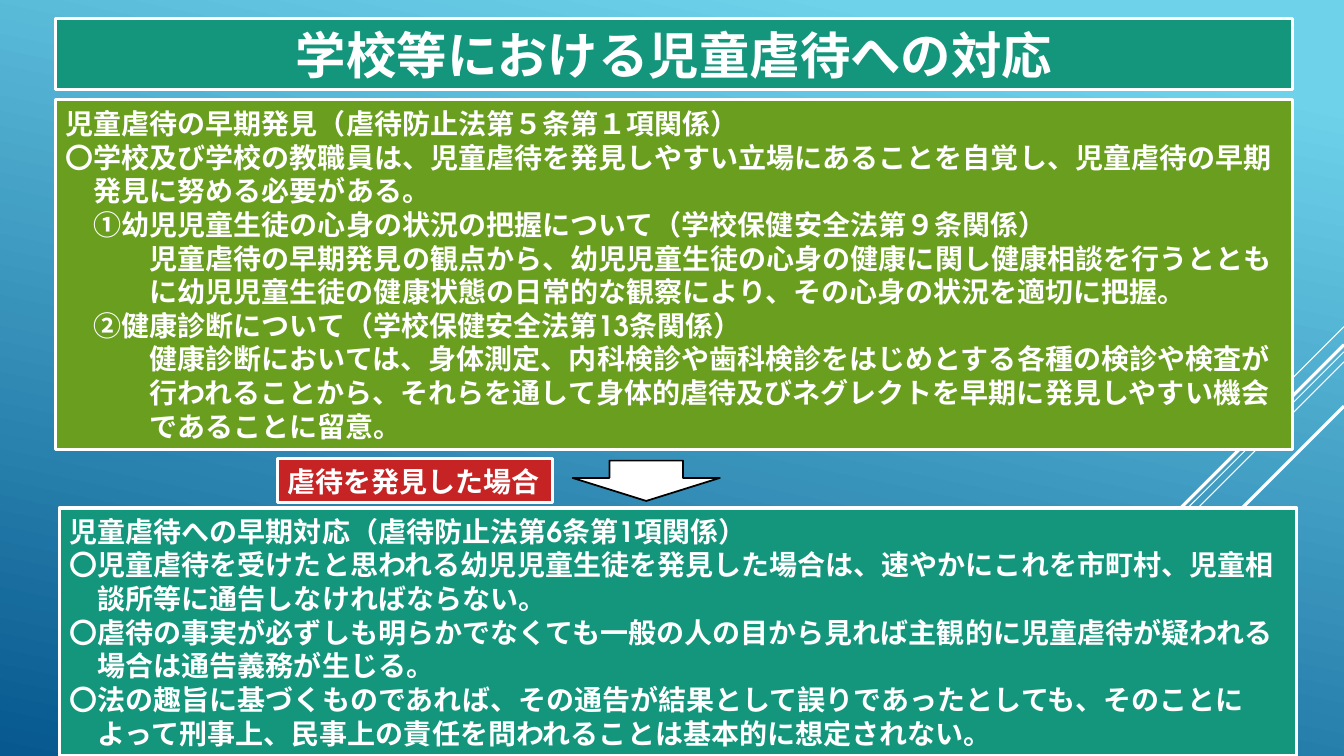
import pptx
import pptx.dml.color
import pptx.enum.dml
import pptx.enum.shapes
import pptx.enum.text
import pptx.oxml
import pptx.util
from lxml import etree

Inches = pptx.util.Inches
Pt = pptx.util.Pt
Shape = pptx.enum.shapes.MSO_SHAPE
Align = pptx.enum.text.PP_ALIGN
Anchor = pptx.enum.text.MSO_ANCHOR

HUES = {
    "sky": "6ED2EB",
    "deep": "06588E",
    "teal": "14967C",
    "green": "6A9E1F",
    "red": "C62324",
    "white": "FFFFFF",
    "black": "000000",
}

FIND = [
    (0, "児童虐待の早期発見（虐待防止法第５条第１項関係）"),
    (0, "〇学校及び学校の教職員は、児童虐待を発見しやすい立場にあることを自覚し、児童虐待の早期"),
    (1, "発見に努める必要がある。"),
    (1, "①幼児児童生徒の心身の状況の把握について（学校保健安全法第９条関係）"),
    (3, "児童虐待の早期発見の観点から、幼児児童生徒の心身の健康に関し健康相談を行うととも"),
    (3, "に幼児児童生徒の健康状態の日常的な観察により、その心身の状況を適切に把握。"),
    (1, "②健康診断について（学校保健安全法第13条関係）"),
    (3, "健康診断においては、身体測定、内科検診や歯科検診をはじめとする各種の検診や検査が"),
    (3, "行われることから、それらを通して身体的虐待及びネグレクトを早期に発見しやすい機会"),
    (3, "であることに留意。"),
]

REPLY = [
    (0, "児童虐待への早期対応（虐待防止法第6条第1項関係）"),
    (0, "〇児童虐待を受けたと思われる幼児児童生徒を発見した場合は、速やかにこれを市町村、児童相"),
    (1, "談所等に通告しなければならない。"),
    (0, "〇虐待の事実が必ずしも明らかでなくても一般の人の目から見れば主観的に児童虐待が疑われる"),
    (1, "場合は通告義務が生じる。"),
    (0, "〇法の趣旨に基づくものであれば、その通告が結果として誤りであったとしても、そのことに"),
    (1, "よって刑事上、民事上の責任を問われることは基本的に想定されない。"),
]

RAYS = [
    (3.24, 1.0, 0.75),
    (3.49, 3.26, 0.75),
    (3.59, 2.07, 0.75),
    (3.42, 1.91, 2.25),
    (4.03, 1.39, 2.25),
]


class Page:
    font = "TeX Gyre Adventor"
    size = 20
    edge = 2.25

    def __init__(self, deck):
        self.slide = deck.slides.add_slide(deck.slide_layouts[3])
        self.shapes = self.slide.shapes

    def hue(self, name):
        return pptx.dml.color.RGBColor.from_string(HUES[name])

    def back(self, top, low, angle):
        fill = self.slide.background.fill
        fill.gradient()
        fill.gradient_angle = 360 - angle
        for stop, name, spot in zip(fill.gradient_stops, (top, low), (0.1, 1)):
            stop.color.rgb = self.hue(name)
            stop.position = spot

    def ray(self, top, run, width):
        line = self.shapes.add_connector(
            pptx.enum.shapes.MSO_CONNECTOR.STRAIGHT,
            Inches(13.33), Inches(top), Inches(13.33 - run), Inches(top + run))
        line.line.color.rgb = self.hue("white")
        line.line.width = Pt(width)
        etree.SubElement(line._element.spPr, pptx.oxml.ns.qn("a:effectLst"))
        tree = line._element.getparent()
        tree.insert(2, line._element)

    def paint(self, shape, fill, line="white", width=edge):
        shape.fill.solid()
        shape.fill.fore_color.rgb = self.hue(fill)
        shape.line.color.rgb = self.hue(line)
        shape.line.width = Pt(width)

    def put(self, shape, rows, size=size, align=Align.LEFT, wrap=True):
        frame = shape.text_frame
        frame.auto_size = pptx.enum.text.MSO_AUTO_SIZE.NONE
        frame.word_wrap = wrap
        frame.vertical_anchor = Anchor.MIDDLE
        for num, (step, text) in enumerate(rows):
            para = frame.add_paragraph() if num else frame.paragraphs[0]
            para.alignment = align
            para.space_before = Pt(0)
            props = para._p.get_or_add_pPr()
            props.set("marL", str(Pt(step * size)))
            props.set("indent", "0")
            etree.SubElement(props, pptx.oxml.ns.qn("a:buNone"))
            run = para.add_run()
            run.text = text
            run.font.name = self.font
            run.font.size = Pt(size)
            run.font.bold = True
            run.font.color.rgb = self.hue("white")

    def place(self, shape, box):
        shape.left, shape.top, shape.width, shape.height = map(Inches, box)

    def title(self, box, text, fill):
        shape = self.shapes.title
        self.place(shape, box)
        self.paint(shape, fill)
        self.put(shape, [(0, text)], 36, Align.CENTER)

    def body(self, slot, box, rows, fill):
        shape = self.slide.placeholders[slot]
        self.place(shape, box)
        self.paint(shape, fill)
        self.put(shape, rows)

    def add(self, kind, box):
        shape = self.shapes.add_shape(kind, *map(Inches, box))
        shape.shadow.inherit = False
        return shape

    def arrow(self, box):
        shape = self.add(Shape.DOWN_ARROW, box)
        shape.adjustments[0] = 0.5
        shape.adjustments[1] = 0.57
        self.paint(shape, "white", "black", 1.25)

    def label(self, box, text, fill):
        shape = self.add(Shape.RECTANGLE, box)
        self.paint(shape, fill)
        self.put(shape, [(0, text)], wrap=False)


def main():
    deck = pptx.Presentation()
    deck.slide_width = Inches(13.33)
    deck.slide_height = Inches(7.5)
    page = Page(deck)
    page.back("sky", "deep", 102)
    for ray in RAYS:
        page.ray(*ray)
    page.title((0.55, 0.18, 12.27, 0.71), "学校等における児童虐待への対応", "teal")
    page.body(1, (0.55, 0.99, 12.27, 3.47), FIND, "green")
    page.body(2, (0.59, 5.04, 12.27, 2.46), REPLY, "teal")
    page.arrow((5.68, 4.57, 1.46, 0.4))
    page.label((2.75, 4.55, 2.73, 0.44), "虐待を発見した場合", "red")
    deck.save("out.pptx")


if __name__ == "__main__":
    main()
